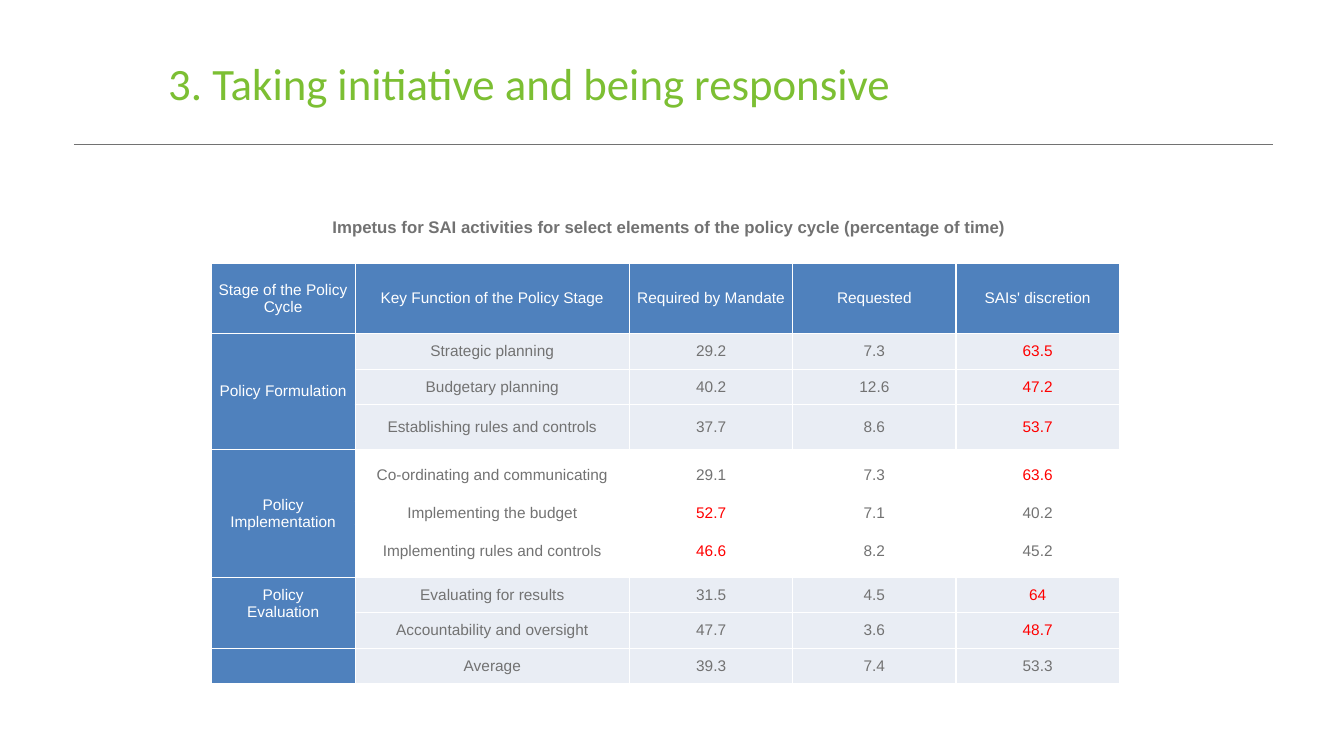
from lxml import etree
from pptx import Presentation
from pptx.dml.color import RGBColor
from pptx.enum.shapes import MSO_CONNECTOR
from pptx.enum.text import MSO_ANCHOR, PP_ALIGN
from pptx.oxml.ns import qn
from pptx.util import Inches, Pt

STRAIGHT = MSO_CONNECTOR.STRAIGHT
MIDDLE = MSO_ANCHOR.MIDDLE
LEFT, CENTER = PP_ALIGN.LEFT, PP_ALIGN.CENTER

WIDTH, HEIGHT = Inches(13.33), Inches(7.5)
GREEN, GRAY, RED, WHITE = "7CBF33", "727272", "FF0000", "FFFFFF"
BLUE, PALE = "4F81BD", "E9EDF4"

HEADINGS = ["Stage of the Policy Cycle", "Key Function of the Policy Stage",
            "Required by Mandate", "Requested", "SAIs' discretion"]
STAGES = [
    ("Policy Formulation", PALE, [
        ("Strategic planning", "29.2", "7.3", "63.5"),
        ("Budgetary planning", "40.2", "12.6", "47.2"),
        ("Establishing rules and controls", "37.7", "8.6", "53.7")]),
    ("Policy Implementation", WHITE, [
        ("Co-ordinating and communicating", "29.1", "7.3", "63.6"),
        ("Implementing the budget", "52.7", "7.1", "40.2"),
        ("Implementing rules and controls", "46.6", "8.2", "45.2")]),
    ("Policy\nEvaluation", PALE, [
        ("Evaluating for results", "31.5", "4.5", "64"),
        ("Accountability and oversight", "47.7", "3.6", "48.7")]),
    ("", PALE, [("Average", "39.3", "7.4", "53.3")]),
]
COLUMN_SHARES = [10.73, 20.41, 12.15, 12.15, 12.15]
ROW_SHARES = [9.3, 4.7, 4.7, 5.9, 6.93, 3.07, 6.93, 4.7, 4.7, 4.7]


def across(percent):
    return round(WIDTH * percent / 100)


def down(percent):
    return round(HEIGHT * percent / 100)


def rgb(value):
    return RGBColor.from_string(value)


def write(frame, text, size, color, font, align, bold=False):
    frame.text = text
    for paragraph in frame.paragraphs:
        paragraph.alignment = align
        for run in paragraph.runs:
            run.font.size = Pt(size)
            run.font.name = font
            run.font.bold = bold
            run.font.color.rgb = rgb(color)


def add_text(slide, left, top, width, height, text, size, color, font, bold=False):
    box = slide.shapes.add_textbox(across(left), down(top), across(width), down(height))
    frame = box.text_frame
    frame.word_wrap = True
    frame.vertical_anchor = MIDDLE
    write(frame, text, size, color, font, LEFT, bold)


def add_rule(slide, left, right, top):
    rule = slide.shapes.add_connector(STRAIGHT, across(left), down(top), across(right), down(top))
    rule.line.color.rgb = rgb(GRAY)
    rule.line.width = Pt(0.5)
    etree.SubElement(rule._element.spPr, qn("a:effectLst"))


def outline(cell):
    properties = cell._tc.get_or_add_tcPr()
    for position, side in enumerate(("lnL", "lnR", "lnT", "lnB")):
        border = etree.Element(qn(f"a:{side}"), w=str(Pt(1)))
        fill = etree.SubElement(border, qn("a:solidFill"))
        etree.SubElement(fill, qn("a:srgbClr"), val=WHITE)
        properties.insert(position, border)


def fill_cell(cell, text, fill, color):
    cell.fill.solid()
    cell.fill.fore_color.rgb = rgb(fill)
    cell.margin_left = cell.margin_right = Inches(0.07)
    cell.margin_top = cell.margin_bottom = 0
    cell.vertical_anchor = MIDDLE
    write(cell.text_frame, text, 11, color, "Arial", CENTER)
    outline(cell)


def add_function_row(table, row, values, fill, highlight):
    peak = max(values[1:], key=float)
    for column, value in enumerate(values, 1):
        color = RED if highlight and value == peak else GRAY
        fill_cell(table.cell(row, column), value, fill, color)


def add_policy_table(slide, left, top):
    table = slide.shapes.add_table(
        len(ROW_SHARES), len(COLUMN_SHARES), across(left), down(top),
        across(sum(COLUMN_SHARES)), down(sum(ROW_SHARES))).table
    table.first_row = table.horz_banding = False
    for column, share in zip(table.columns, COLUMN_SHARES):
        column.width = across(share)
    for row, share in zip(table.rows, ROW_SHARES):
        row.height = down(share)
    for column, heading in enumerate(HEADINGS):
        fill_cell(table.cell(0, column), heading, BLUE, WHITE)
    start = 1
    for stage, fill, functions in STAGES:
        for row, values in enumerate(functions, start):
            fill_cell(table.cell(row, 0), stage if row == start else "", BLUE, WHITE)
            add_function_row(table, row, values, fill, highlight=bool(stage))
        end = start + len(functions)
        if len(functions) > 1:
            table.cell(start, 0).merge(table.cell(end - 1, 0))
        if "\n" in stage:
            table.cell(start, 0).margin_bottom = Inches(0.18)
        start = end


def main():
    deck = Presentation()
    deck.slide_width, deck.slide_height = WIDTH, HEIGHT
    slide = deck.slides.add_slide(deck.slide_layouts[6])
    add_rule(slide, 5.5, 94.7, 19.1)
    add_text(slide, 11.78, 3.5, 81.1, 14.9,
             "3. Taking initiative and being responsive", 32, GREEN, "Calibri")
    add_policy_table(slide, 15.7, 34.85)
    add_text(slide, 24, 28, 54, 4,
             "Impetus for SAI activities for select elements of the policy cycle "
             "(percentage of time)", 12, GRAY, "Arial", bold=True)
    deck.save("out.pptx")


if __name__ == "__main__":
    main()
